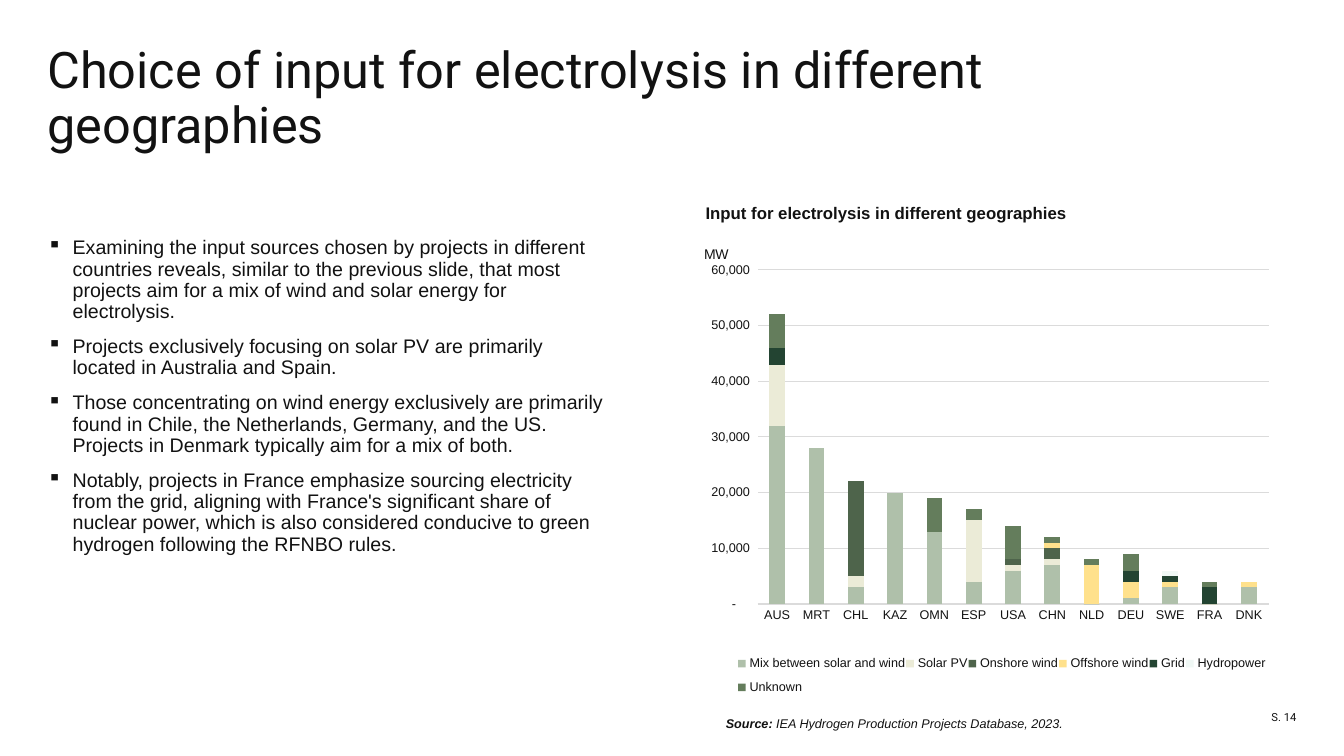
from dataclasses import dataclass
from typing import Any, Optional

from pptx import Presentation
from pptx.chart.data import CategoryChartData
from pptx.dml.color import RGBColor
from pptx.enum.chart import XL_CHART_TYPE, XL_LEGEND_POSITION, XL_TICK_MARK
from pptx.enum.text import MSO_ANCHOR, MSO_AUTO_SIZE, PP_ALIGN
from pptx.oxml import parse_xml
from pptx.oxml.ns import nsdecls, qn
from pptx.util import Emu, Pt

INK = "121212"
RULE = "DBDBDB"
NUMBER_FORMAT = '_-* #,##0_-;\\-* #,##0_-;_-* "-"??_-;_-@_'

TITLE = "Choice of input for electrolysis in different geographies"
BULLETS = [
    "Examining the input sources chosen by projects in different countries reveals, similar to the "
    "previous slide, that most projects aim for a mix of wind and solar energy for electrolysis.",
    "Projects exclusively focusing on solar PV are primarily located in Australia and Spain.",
    "Those concentrating on wind energy exclusively are primarily found in Chile, the Netherlands, "
    "Germany, and the US. Projects in Denmark typically aim for a mix of both.",
    "Notably, projects in France emphasize sourcing electricity from the grid, aligning with France's "
    "significant share of nuclear power, which is also considered conducive to green hydrogen "
    "following the RFNBO rules.",
]
COUNTRIES = ["AUS", "MRT", "CHL", "KAZ", "OMN", "ESP", "USA", "CHN", "NLD", "DEU", "SWE", "FRA", "DNK"]


@dataclass(frozen=True)
class Box:
    left: int
    top: int
    width: int
    height: int


@dataclass(frozen=True)
class Source:
    name: str
    colour: str
    gigawatts: list[Optional[int]]


SOURCES = [
    Source("Mix between solar and wind", "AFC0AA", [32, 28, 3, 20, 13, 4, 6, 7, 0, 1, 3, 0, 3]),
    Source("Solar PV", "EBEBD7", [11, 0, 2, 0, 0, 11, 1, 1, 0, 0, 0, 0, 0]),
    Source("Onshore wind", "4E644B", [0, None, 17, None, None, 0, 1, 2, 0, 0, 0, 0, 0]),
    Source("Offshore wind", "FFE18C", [None, None, None, None, None, 0, 0, 1, 7, 3, 1, 0, 1]),
    Source("Grid", "234432", [3, None, 0, None, None, 0, 0, None, 0, 2, 1, 3, 0]),
    Source("Hydropower", "F0F8F5", [None, None, None, None, None, None, 0, 0, None, 0, 1, None, 0]),
    Source("Unknown", "647D5C", [6, None, 0, None, 6, 2, 6, 1, 1, 3, 0, 1, 0]),
]


def px(n: int) -> Emu:
    return Emu(n * 9144)


def rgb(colour: str) -> RGBColor:
    return RGBColor.from_string(colour)


def set_font(font: Any, size: int, name: str = "Arial", bold: bool = False, italic: bool = False) -> None:
    font.size, font.name, font.bold, font.italic = Pt(size), name, bold, italic
    font.color.rgb = rgb(INK)


def place(sp: Any, box: Box) -> None:
    sp.left, sp.top, sp.width, sp.height = map(px, (box.left, box.top, box.width, box.height))


def prepare_frame(tf: Any, anchor: MSO_ANCHOR = MSO_ANCHOR.TOP, inset: bool = False) -> None:
    tf.word_wrap = True
    tf.auto_size = MSO_AUTO_SIZE.NONE
    tf.vertical_anchor = anchor
    if not inset:
        tf.margin_left = tf.margin_right = tf.margin_top = tf.margin_bottom = 0


def add_text(slide: Any, box: Box, text: str, anchor: MSO_ANCHOR = MSO_ANCHOR.TOP, inset: bool = False) -> Any:
    sp = slide.shapes.add_textbox(0, 0, 0, 0)
    place(sp, box)
    prepare_frame(sp.text_frame, anchor, inset)
    sp.text_frame.text = text
    return sp.text_frame


def add_bullets(slide: Any, box: Box) -> None:
    tf = add_text(slide, box, "\n".join(BULLETS))
    for i, p in enumerate(tf.paragraphs):
        p.line_spacing = 0.9
        p.space_before = Pt(10 if i else 0)
        pPr = p._p.get_or_add_pPr()
        pPr.set("marL", str(px(25)))
        pPr.set("indent", str(-px(25)))
        pPr.append(parse_xml(f'<a:buChar {nsdecls("a")} char="▪"/>'))
        set_font(p.runs[0].font, 14)


def set_layout(parent: Any, inner: bool = False, **fractions: float) -> None:
    for old in parent.findall(qn("c:layout")):
        parent.remove(old)
    target = '<c:layoutTarget val="inner"/>' if inner else ""
    places = "".join(f'<c:{key} val="{value}"/>' for key, value in fractions.items())
    layout = parse_xml(
        f'<c:layout {nsdecls("c")}><c:manualLayout>{target}<c:xMode val="edge"/>'
        f'<c:yMode val="edge"/>{places}</c:manualLayout></c:layout>'
    )
    overlay = parent.find(qn("c:overlay"))
    parent.insert(0 if overlay is None else parent.index(overlay), layout)


def style_line(line: Any) -> None:
    line.color.rgb = rgb(RULE)
    line.width = Pt(0.75)


def add_input_chart(slide: Any, box: Box) -> None:
    data = CategoryChartData(number_format=NUMBER_FORMAT)
    data.categories = COUNTRIES
    for source in SOURCES:
        data.add_series(source.name, [None if v is None else v * 1000 for v in source.gigawatts])
    frame = slide.shapes.add_chart(XL_CHART_TYPE.COLUMN_STACKED, 0, 0, px(box.width), px(box.height), data)
    place(frame, box)
    chart = frame.chart
    chart.has_title = False
    set_font(chart.font, 10)

    plot = chart.plots[0]
    plot.gap_width, plot.overlap, plot.vary_by_categories = 150, 100, False
    for series, source in zip(plot.series, SOURCES):
        series.format.fill.solid()
        series.format.fill.fore_color.rgb = rgb(source.colour)
        series.invert_if_negative = False

    for axis in (chart.category_axis, chart.value_axis):
        axis.major_tick_mark = axis.minor_tick_mark = XL_TICK_MARK.NONE
        set_font(axis.tick_labels.font, 9)
    style_line(chart.category_axis.format.line)

    values = chart.value_axis
    values.minimum_scale, values.maximum_scale, values.major_unit = 0, 60000, 10000
    values.format.line.fill.background()
    style_line(values.major_gridlines.format.line)
    values.tick_labels.number_format = NUMBER_FORMAT
    values.tick_labels.number_format_is_linked = False
    tf = values.axis_title.text_frame
    tf.text = "MW"
    tf._txBody.bodyPr.set("rot", "0")
    set_font(tf.paragraphs[0].runs[0].font, 10)
    set_layout(values.axis_title._element, x=0.01, y=0.01)

    chart.has_legend = True
    chart.legend.position = XL_LEGEND_POSITION.BOTTOM
    chart.legend.include_in_layout = False
    set_font(chart.legend.font, 9)
    set_layout(chart.legend._element, x=0.07, y=0.87, w=0.9, h=0.12)
    set_layout(chart._chartSpace.chart.plotArea, inner=True, x=0.105, y=0.068, w=0.868, h=0.71)


def main() -> None:
    prs = Presentation()
    prs.slide_width, prs.slide_height = px(1333), px(750)
    slide = prs.slides.add_slide(prs.slide_layouts[5])

    title = slide.shapes.title
    place(title, Box(47, 47, 982, 106))
    prepare_frame(title.text_frame, MSO_ANCHOR.BOTTOM)
    title.text_frame.text = TITLE
    p = title.text_frame.paragraphs[0]
    p.alignment, p.line_spacing = PP_ALIGN.LEFT, 0.9
    set_font(p.runs[0].font, 36, "Roboto")

    add_bullets(slide, Box(47, 236, 559, 332))
    add_input_chart(slide, Box(690, 236, 584, 467))

    tf = add_text(slide, Box(690, 196, 420, 30), "Input for electrolysis in different geographies", inset=True)
    set_font(tf.paragraphs[0].runs[0].font, 12, bold=True)

    tf = add_text(slide, Box(710, 705, 361, 25), "Source:", inset=True)
    p = tf.paragraphs[0]
    p.add_run().text = " IEA Hydrogen Production Projects Database, 2023."
    for r, bold in zip(p.runs, (True, False)):
        set_font(r.font, 9, bold=bold, italic=True)

    tf = add_text(slide, Box(1183, 679, 103, 39), "S. 14", MSO_ANCHOR.BOTTOM)
    tf.paragraphs[0].alignment = PP_ALIGN.RIGHT
    set_font(tf.paragraphs[0].runs[0].font, 8, "Roboto")

    prs.save("out.pptx")


if __name__ == "__main__":
    main()
